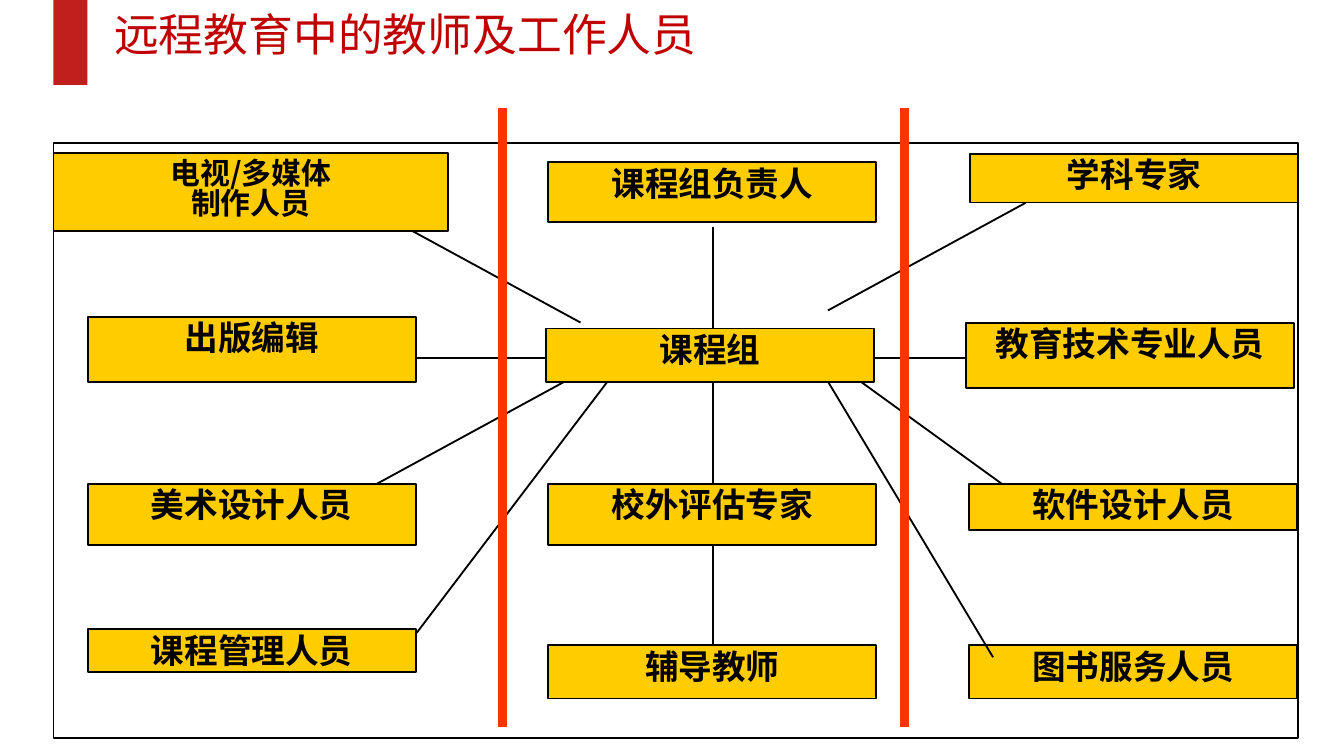
from dataclasses import dataclass

from lxml.etree import SubElement
from pptx import Presentation
from pptx.dml.color import RGBColor
from pptx.enum.shapes import MSO_CONNECTOR as Connector, MSO_SHAPE as Shape
from pptx.enum.text import MSO_ANCHOR as Anchor, PP_ALIGN as Align
from pptx.oxml.ns import qn
from pptx.util import Pt

COLORS = {
    "title": "C00000",
    "accent": "C11E1E",
    "box": "FFCC00",
    "ink": "000000",
    "divider": "FF3300",
}
FONT = "Noto Sans CJK SC"
LEFT, MIDDLE, RIGHT = 47, 293.8, 519.2
BOX_WIDTH = 175.7
ROW_3, ROW_4 = 259.2, 345.6
HUB_BOTTOM = 204.5


@dataclass(frozen=True)
class Role:
    text: str
    left: float
    top: float
    height: float
    width: float = BOX_WIDTH
    size: float = 18


@dataclass(frozen=True)
class Line:
    x1: float
    y1: float
    x2: float
    y2: float
    color: str = "ink"
    weight: float = 1


ROLES = [
    Role("课程组负责人", MIDDLE, 87, 32),
    Role("教育技术专业人员", 517.6, 173, 34.8),
    Role("图书服务人员", RIGHT, ROW_4, 28.6),
    Role("课程管理人员", LEFT, 337, 23),
    Role("辅导教师", MIDDLE, ROW_4, 28.6),
    Role("软件设计人员", RIGHT, ROW_3, 24.6),
    Role("学科专家", 519.8, 82.5, 26),
    Role("课程组", 292.5, 176, 28.5),
    Role("出版编辑", LEFT, 169.8, 34.8),
    Role("美术设计人员", LEFT, ROW_3, 33),
    Role("校外评估专家", MIDDLE, ROW_3, 33),
    Role("电视/多媒体\n制作人员", 28.7, 82, 41.8, 211.2, 16),
]
SPOKES_BEHIND = [
    Line(540.7, 262.1, 452.2, 198),
    Line(196.6, 262.1, 302.4, HUB_BOTTOM),
    Line(549.4, 108.7, 443.6, 166.3),
    Line(205.2, 115.2, 311, 172.8),
    Line(223.2, 192, 522.7, 192),
    Line(381.8, 121.7, 381.8, 358.6),
]
LINES_IN_FRONT = [
    Line(325.4, HUB_BOTTOM, 223.2, 339.1),
    Line(443.6, HUB_BOTTOM, 532, 352.1),
    *(Line(x, 57.6, x, 389.5, "divider", 4.5) for x in (269.3, 484.6)),
]


def rgb(name: str) -> RGBColor:
    return RGBColor.from_string(COLORS[name])


def write_text(shape, text: str, size: float, color: str, bold: bool, align) -> None:
    frame = shape.text_frame
    frame.word_wrap = True
    frame.vertical_anchor = Anchor.TOP
    frame.text = text
    for paragraph in frame.paragraphs:
        paragraph.alignment = align
        paragraph.line_spacing = 0.85
        font = paragraph.font
        font.size = Pt(size)
        font.bold = bold
        font.color.rgb = rgb(color)
        font.name = FONT
        SubElement(font._element, qn("a:ea"), typeface=FONT)


def draw_rectangle(slide, left: float, top: float, width: float, height: float,
                   fill: str | None, outline: str | None):
    shape = slide.shapes.add_shape(
        Shape.RECTANGLE, Pt(left), Pt(top), Pt(width), Pt(height))
    shape.shadow.inherit = False
    if fill:
        shape.fill.solid()
        shape.fill.fore_color.rgb = rgb(fill)
    else:
        shape.fill.background()
    if outline:
        shape.line.color.rgb = rgb(outline)
        shape.line.width = Pt(1)
    else:
        shape.line.fill.background()
    return shape


def draw_role(slide, role: Role) -> None:
    shape = draw_rectangle(
        slide, role.left, role.top, role.width, role.height, "box", "ink")
    write_text(shape, role.text, role.size, "ink", True, Align.CENTER)


def draw_line(slide, line: Line) -> None:
    connector = slide.shapes.add_connector(
        Connector.STRAIGHT, Pt(line.x1), Pt(line.y1), Pt(line.x2), Pt(line.y2))
    connector.line.color.rgb = rgb(line.color)
    connector.line.width = Pt(line.weight)
    SubElement(connector._element.spPr, qn("a:effectLst"))


def main() -> None:
    presentation = Presentation()
    presentation.slide_width, presentation.slide_height = Pt(720), Pt(405)
    slide = presentation.slides.add_slide(presentation.slide_layouts[6])

    title = slide.shapes.add_textbox(Pt(54), Pt(4.3), Pt(366.5), Pt(65.5))
    write_text(title, "远程教育中的教师及工作人员", 24, "title", False, Align.LEFT)
    draw_rectangle(slide, 28.7, 0, 18.2, 45.5, "accent", None)
    draw_rectangle(slide, 28.7, 76.5, 666.7, 319, None, "ink")

    for line in SPOKES_BEHIND:
        draw_line(slide, line)
    for role in ROLES:
        draw_role(slide, role)
    for line in LINES_IN_FRONT:
        draw_line(slide, line)

    presentation.save("out.pptx")


if __name__ == "__main__":
    main()
